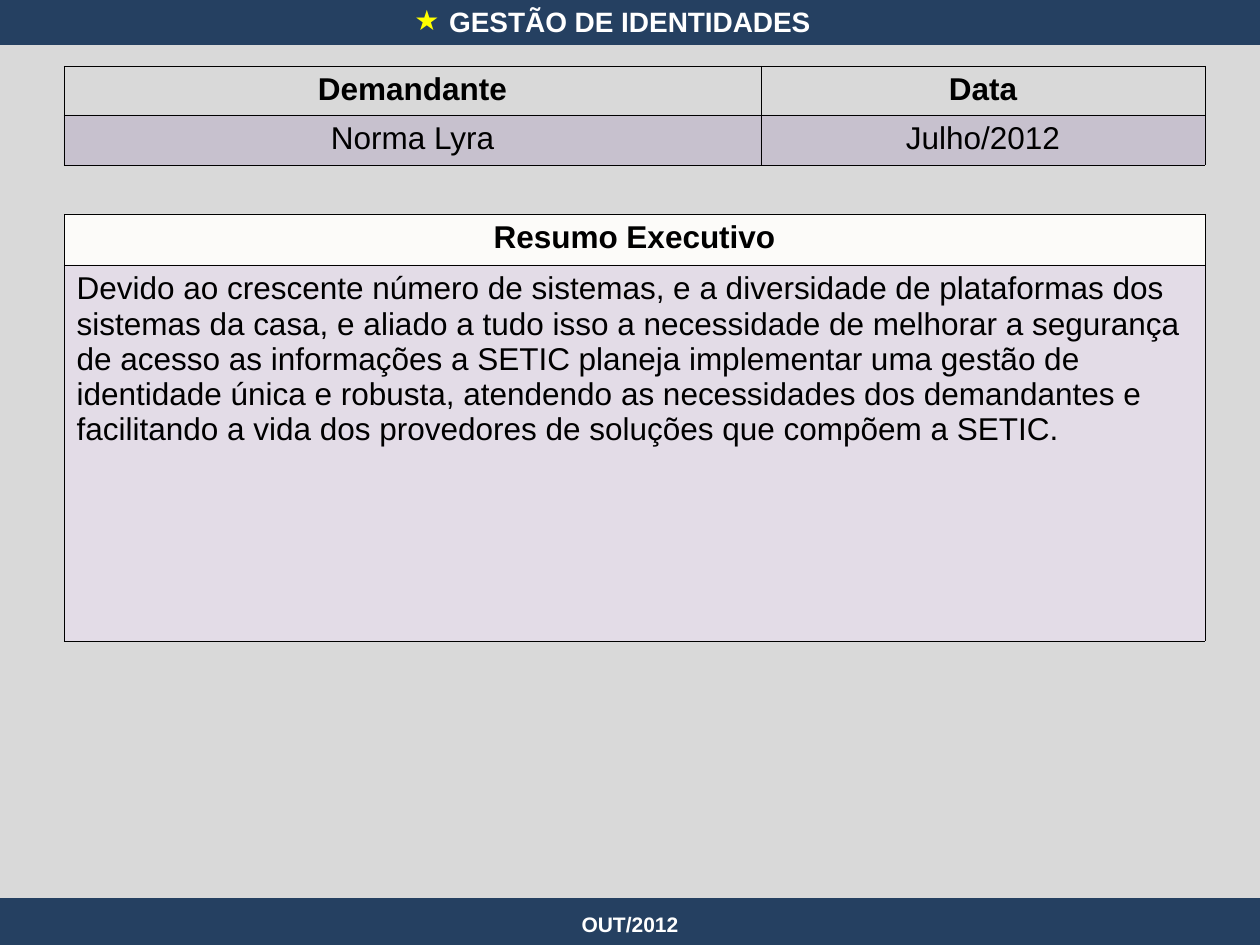
from lxml.etree import SubElement as Sub
from pptx import Presentation
from pptx.dml.color import RGBColor as RGB
from pptx.enum.shapes import MSO_SHAPE as Shape
from pptx.enum.text import MSO_ANCHOR as Anchor, PP_ALIGN as Align
from pptx.oxml.ns import qn
from pptx.util import Emu, Pt

SCALE = 914400 / 126
NAVY = RGB(0x25, 0x40, 0x61)
GREY = RGB(0xD9, 0xD9, 0xD9)
CREAM = RGB(0xFC, 0xFB, 0xF9)
PURPLE = RGB(0x80, 0x64, 0xA2)
WHITE = RGB(0xFF, 0xFF, 0xFF)
BLACK = RGB(0, 0, 0)
YELLOW = RGB(0xFF, 0xFF, 0)
LEFT, WIDTH = 64, 1141

SUMMARY = (
    "Devido ao crescente número de sistemas, e a diversidade de plataformas dos "
    "sistemas da casa, e aliado a tudo isso a necessidade de melhorar a segurança "
    "de acesso as informações a SETIC planeja implementar uma gestão de "
    "identidade única e robusta, atendendo as necessidades dos demandantes e "
    "facilitando a vida dos provedores de soluções que compõem a SETIC."
)


def px(*sizes):
    return [Emu(round(size * SCALE)) for size in sizes]


def write(frame, text, size=18, color=BLACK, bold=False, align=Align.CENTER, shadow=False):
    para = frame.paragraphs[0]
    para.alignment = align
    run = para.add_run()
    run.text = text
    font = run.font
    font.size, font.bold = Pt(size), bold
    font.color.rgb = color
    if shadow:
        effects = Sub(font._element, qn("a:effectLst"))
        outer = Sub(effects, qn("a:outerShdw"), blurRad="38100", dist="38100", dir="2700000")
        shade = Sub(outer, qn("a:srgbClr"), val="000000")
        Sub(shade, qn("a:alpha"), val="43000")
    font.name = "Arial"


def add_band(slide, box, color):
    band = slide.shapes.add_shape(Shape.RECTANGLE, *px(*box))
    band.shadow.inherit = False
    band.fill.solid()
    band.fill.fore_color.rgb = color
    band.line.fill.background()


def add_label(slide, box, text, **style):
    frame = slide.shapes.add_textbox(*px(*box)).text_frame
    frame.word_wrap = True
    frame.vertical_anchor = Anchor.MIDDLE
    write(frame, text, **style)


def set_title(slide, box, text, **style):
    title = slide.shapes.title
    title.left, title.top, title.width, title.height = px(*box)
    title.text_frame.vertical_anchor = Anchor.MIDDLE
    write(title.text_frame, text, **style)


def add_edges(cell):
    props = cell._tc.get_or_add_tcPr()
    for side in ("lnL", "lnR", "lnT", "lnB"):
        line = Sub(props, qn(f"a:{side}"), w=str(Pt(0.25)))
        fill = Sub(line, qn("a:solidFill"))
        Sub(fill, qn("a:srgbClr"), val=str(BLACK))


def tint(cell, color):
    cell.fill.solid()
    cell.fill.fore_color.rgb = color
    shade = cell._tc.tcPr.find(f"{qn('a:solidFill')}/{qn('a:srgbClr')}")
    Sub(shade, qn("a:alpha"), val="20000")


def add_grid(slide, top, cols, rows, data, align=Align.CENTER):
    box = px(LEFT, top, sum(cols), sum(rows))
    table = slide.shapes.add_table(len(rows), len(cols), *box).table
    table.first_row = table.horz_banding = False
    for col, width in zip(table.columns, px(*cols)):
        col.width = width
    for row, height in zip(table.rows, px(*rows)):
        row.height = height
    for r, texts in enumerate(data):
        for c, text in enumerate(texts):
            cell = table.cell(r, c)
            add_edges(cell)
            if r == 0:
                cell.fill.background()
                write(cell.text_frame, text, bold=True)
            else:
                tint(cell, PURPLE)
                write(cell.text_frame, text, align=align)


def main():
    deck = Presentation()
    deck.slide_width, deck.slide_height = px(1260, 945)
    slide = deck.slides.add_slide(deck.slide_layouts[5])
    add_band(slide, (0, 45, 1260, 863), GREY)
    add_band(slide, (0, 898, 1260, 47), NAVY)
    add_band(slide, (0, -1, 1260, 46), NAVY)
    add_label(slide, (0, 900, 1260, 49), "OUT/2012", size=12, color=WHITE, bold=True, shadow=True)
    add_band(slide, (LEFT, 214, WIDTH, 427), CREAM)
    title = slide.shapes.title._element
    title.getparent().append(title)
    set_title(slide, (0, -14, 1260, 70), "GESTÃO DE IDENTIDADES",
              size=16, color=WHITE, bold=True, shadow=True)
    add_grid(slide, 66, (697, 444), (49, 50),
             [("Demandante", "Data"), ("Norma Lyra", "Julho/2012")])
    add_grid(slide, 214, (WIDTH,), (51, 376),
             [("Resumo Executivo",), (SUMMARY,)], align=Align.LEFT)
    add_label(slide, (402, -4, 59, 47), "★", size=16, color=YELLOW, align=Align.LEFT)
    deck.save("out.pptx")


if __name__ == "__main__":
    main()
